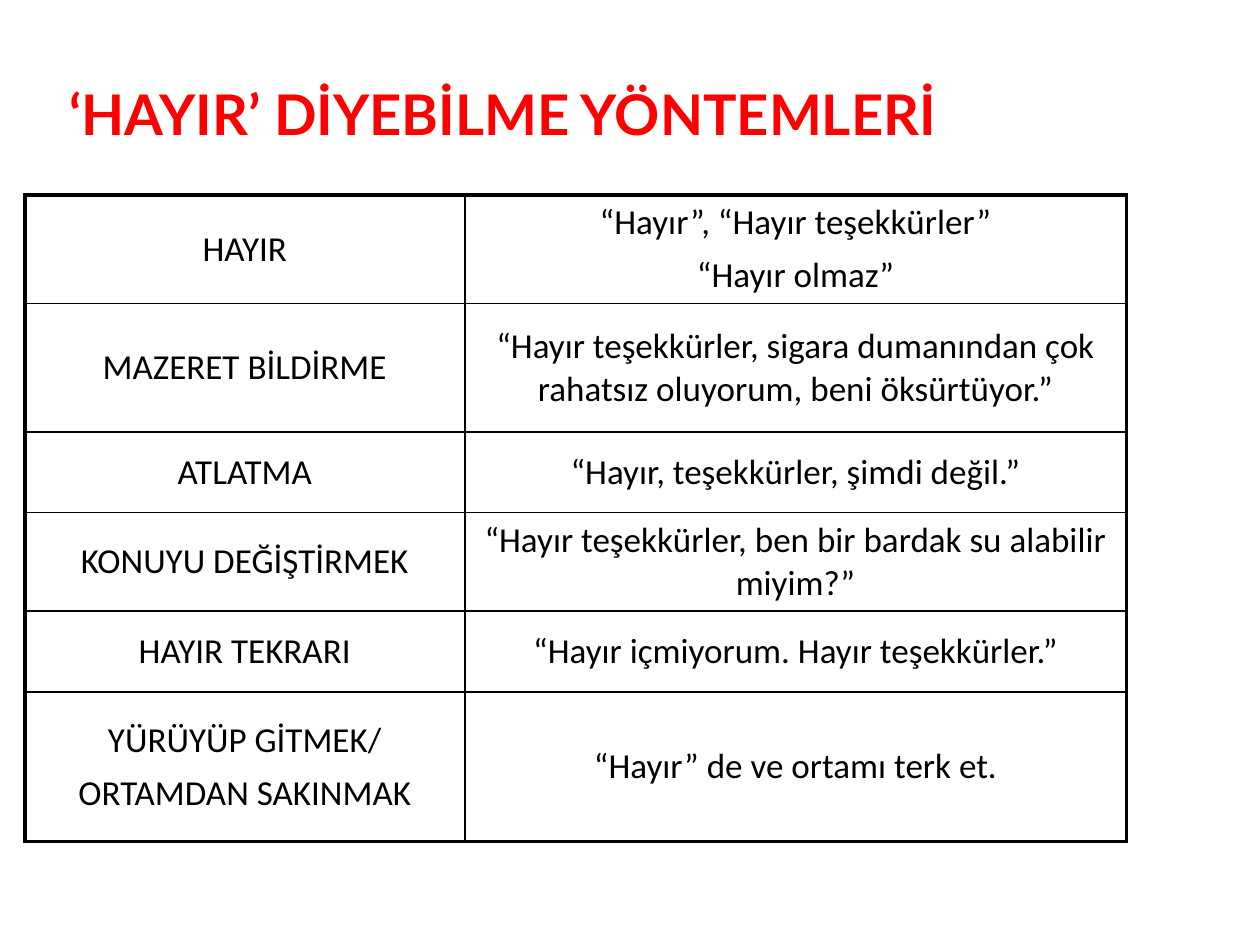
from dataclasses import dataclass

from lxml import etree
from pptx import Presentation
from pptx import util as u
from pptx.dml.color import RGBColor
from pptx.enum import shapes, text
from pptx.oxml import ns

TITLE = "‘HAYIR’ DİYEBİLME YÖNTEMLERİ"
METHODS = [
    (["HAYIR"], ["“Hayır”, “Hayır teşekkürler”", "“Hayır olmaz”"]),
    (["MAZERET BİLDİRME"],
     ["“Hayır teşekkürler, sigara dumanından çok rahatsız oluyorum, beni öksürtüyor.”"]),
    (["ATLATMA"], ["“Hayır, teşekkürler, şimdi değil.”"]),
    (["KONUYU DEĞİŞTİRMEK"],
     ["“Hayır teşekkürler, ben bir bardak su alabilir miyim?”"]),
    (["HAYIR TEKRARI"], ["“Hayır içmiyorum. Hayır teşekkürler.”"]),
    (["YÜRÜYÜP GİTMEK/", "ORTAMDAN SAKINMAK"], ["“Hayır” de ve ortamı terk et."]),
]
SLIDE_SIZE = (720, 540)
TITLE_BOX = (36, 21.4, 648, 62.6)
TABLE_ORIGIN = (14.2, 111.4)
COLUMN_WIDTHS = [251.4, 378]
ROW_HEIGHTS = [61.6, 73.5, 46.1, 56.2, 46.1, 85.7]


@dataclass(frozen=True)
class Theme:
    title_font: str = "Lato"
    body_font: str = "Calibri"
    title_size: float = 32
    body_size: float = 20
    paragraph_gap: float = 5.8
    accent: str = "FF0000"
    ink: str = "000000"
    paper: str = "FFFFFF"
    title_line: float = 2.5
    outer_line: float = 2.25
    inner_line: float = 1


THEME = Theme()


def write_text(frame, lines, *, font, size, color, bold=False,
               align=text.PP_ALIGN.LEFT, gap=0):
    for index, line in enumerate(lines):
        paragraph = frame.paragraphs[0] if index == 0 else frame.add_paragraph()
        paragraph.alignment = align
        paragraph.space_before = u.Pt(gap if index else 0)
        run = paragraph.add_run()
        run.text = line
        run.font.name = font
        run.font.size = u.Pt(size)
        run.font.bold = bold
        run.font.color.rgb = RGBColor.from_string(color)


def paint(fill, color):
    fill.solid()
    fill.fore_color.rgb = RGBColor.from_string(color)


def set_borders(cell, outer_sides):
    properties = cell._tc.get_or_add_tcPr()
    for side in "LRTB":
        width = THEME.outer_line if side in outer_sides else THEME.inner_line
        line = etree.SubElement(properties, ns.qn(f"a:ln{side}"), w=str(u.Pt(width)))
        fill = etree.SubElement(line, ns.qn("a:solidFill"))
        etree.SubElement(fill, ns.qn("a:srgbClr"), val=THEME.ink)


def add_title(slide):
    shape = slide.shapes.add_shape(shapes.MSO_SHAPE.RECTANGLE, *map(u.Pt, TITLE_BOX))
    shape.shadow.inherit = False
    paint(shape.fill, THEME.paper)
    paint(shape.line.fill, THEME.paper)
    shape.line.width = u.Pt(THEME.title_line)
    frame = shape.text_frame
    frame.word_wrap = True
    frame.vertical_anchor = text.MSO_ANCHOR.BOTTOM
    frame.margin_left = frame.margin_right = u.Pt(3.6)
    frame.margin_top = frame.margin_bottom = 0
    write_text(frame, [TITLE], font=THEME.title_font, size=THEME.title_size,
               color=THEME.accent, bold=True)


def add_methods_table(slide):
    size = (sum(COLUMN_WIDTHS), sum(ROW_HEIGHTS))
    table = slide.shapes.add_table(len(METHODS), len(COLUMN_WIDTHS),
                                   *map(u.Pt, TABLE_ORIGIN + size)).table
    table.first_row = table.horz_banding = False
    for column, width in zip(table.columns, COLUMN_WIDTHS):
        column.width = u.Pt(width)
    last_row = len(METHODS) - 1
    for row_index, (method, height) in enumerate(zip(METHODS, ROW_HEIGHTS)):
        table.rows[row_index].height = u.Pt(height)
        row_sides = {0: "T", last_row: "B"}.get(row_index, "")
        for column_index, (lines, side) in enumerate(zip(method, "LR")):
            cell = table.cell(row_index, column_index)
            cell.vertical_anchor = text.MSO_ANCHOR.MIDDLE
            set_borders(cell, side + row_sides)
            paint(cell.fill, THEME.paper)
            write_text(cell.text_frame, lines, font=THEME.body_font,
                       size=THEME.body_size, color=THEME.ink,
                       align=text.PP_ALIGN.CENTER, gap=THEME.paragraph_gap)


def main():
    presentation = Presentation()
    presentation.slide_width, presentation.slide_height = map(u.Pt, SLIDE_SIZE)
    slide = presentation.slides.add_slide(presentation.slide_layouts[6])
    add_title(slide)
    add_methods_table(slide)
    presentation.save("out.pptx")


if __name__ == "__main__":
    main()
